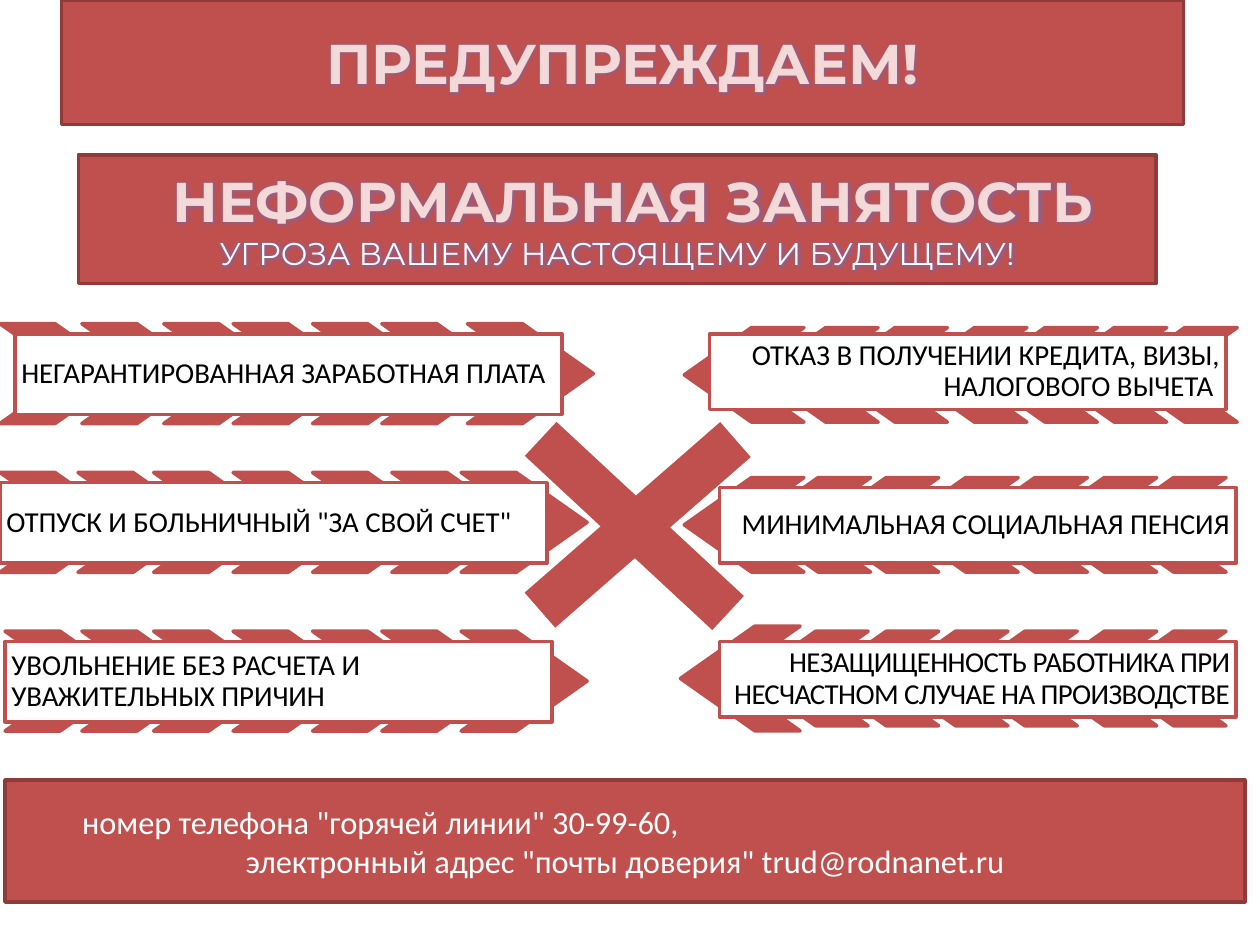
from dataclasses import dataclass

from lxml import etree
from pptx import Presentation
from pptx.dml.color import RGBColor
from pptx.enum.shapes import MSO_SHAPE
from pptx.enum.text import MSO_ANCHOR, PP_ALIGN
from pptx.oxml.ns import qn
from pptx.util import Pt

RECT = MSO_SHAPE.RECTANGLE
ARROW = MSO_SHAPE.CHEVRON
MIDDLE = MSO_ANCHOR.MIDDLE
LEFT, CENTER, RIGHT = PP_ALIGN.LEFT, PP_ALIGN.CENTER, PP_ALIGN.RIGHT

COLORS = {
    "red": "C0504D",
    "dark": "8E3B39",
    "white": "FFFFFF",
    "black": "000000",
    "pink": "F3D9D8",
    "glow": "8064A2",
}

STYLES = {
    "head": {"size": Pt(32), "bold": True, "name": "Montserrat"},
    "sub": {"size": Pt(18), "bold": False, "name": "Montserrat"},
    "foot": {"size": Pt(18.5), "bold": False, "name": "Calibri"},
    "risk": {"size": Pt(16.5), "bold": False, "name": "Calibri"},
}


@dataclass
class Area:
    x: float
    y: float
    w: float
    h: float


@dataclass
class Line:
    text: str
    style: str
    color: str
    align: PP_ALIGN = CENTER
    indent: float = 0
    glow: bool = False
    tight: int = 0


@dataclass
class Banner:
    area: Area
    lines: list[Line]


@dataclass
class Side:
    arrow: tuple[float, float]
    box: tuple[float, float]
    turn: int
    align: PP_ALIGN


@dataclass
class Risk:
    side: Side
    text: str
    top: float
    box: tuple[float, float]
    starts: list[float]
    grow: float = 0
    tight: int = 0


BANNERS = [
    Banner(Area(35.2, 0, 641, 71.3), [
        Line("ПРЕДУПРЕЖДАЕМ!", "head", "pink", glow=True),
    ]),
    Banner(Area(44.8, 88.5, 615.8, 73.5), [
        Line("НЕФОРМАЛЬНАЯ ЗАНЯТОСТЬ", "head", "pink", indent=18, glow=True),
        Line("УГРОЗА ВАШЕМУ НАСТОЯЩЕМУ И БУДУЩЕМУ!", "sub", "white", glow=True),
    ]),
    Banner(Area(2.9, 445.7, 708.5, 69.8), [
        Line('номер телефона "горячей линии" 30-99-60,', "foot", "white", LEFT, 37),
        Line('электронный адрес "почты доверия" trud@rodnanet.ru', "foot", "white"),
    ]),
]

WEST = Side((72, 57), (312.5, 46), 0, LEFT)
EAST = Side((68.4, 54), (295.2, 43.2), 180, RIGHT)

RISKS = [
    Risk(WEST, "НЕГАРАНТИРОВАННАЯ ЗАРАБОТНАЯ ПЛАТА", 185, (8.6, 190.8),
         [0, 46.8, 93.6, 133.2, 178.6, 218.2, 267.1]),
    Risk(WEST, 'ОТПУСК И БОЛЬНИЧНЫЙ "ЗА СВОЙ СЧЕТ"', 270, (0, 275.8),
         [0, 44.6, 87.8, 133.2, 178.6, 223.9, 263.5]),
    Risk(WEST, "УВОЛЬНЕНИЕ БЕЗ РАСЧЕТА И УВАЖИТЕЛЬНЫХ ПРИЧИН", 360.7, (2.9, 366.5),
         [2.9, 46.8, 87.8, 133.2, 178.6, 218.2, 263.5]),
    Risk(EAST, "ОТКАЗ В ПОЛУЧЕНИИ КРЕДИТА, ВИЗЫ, НАЛОГОВОГО ВЫЧЕТА ", 187.2, (405.4, 190.8),
         [391, 433.4, 473, 518.4, 558.7, 598.3, 638.6]),
    Risk(EAST, "МИНИМАЛЬНАЯ СОЦИАЛЬНАЯ ПЕНСИЯ", 272.9, (411.1, 278.6),
         [391, 429.1, 468, 513.4, 553, 592.6, 632.2]),
    Risk(EAST, "НЕЗАЩИЩЕННОСТЬ РАБОТНИКА ПРИ НЕСЧАСТНОМ СЛУЧАЕ НА ПРОИЗВОДСТВЕ",
         360.7, (411.1, 366.5),
         [388.8, 427.7, 468, 507.6, 547.2, 592.6, 632.2], grow=2.9, tight=-30),
]

BARS = [(Area(289.4, 287.3, 146.2, 26.6), 42.9), (Area(290.2, 286.6, 148.3, 26.6), 138.9)]


def tint(key: str) -> RGBColor:
    return RGBColor.from_string(COLORS[key])


def add_form(slide, kind, area: Area, fill: str, edge: str | None, turn: float = 0):
    form = slide.shapes.add_shape(kind, Pt(area.x), Pt(area.y), Pt(area.w), Pt(area.h))
    form.shadow.inherit = False
    form.rotation = turn
    form.fill.solid()
    form.fill.fore_color.rgb = tint(fill)
    if edge:
        form.line.color.rgb = tint(edge)
        form.line.width = Pt(2)
    else:
        form.line.fill.background()
    return form


def add_glow(run) -> None:
    fill = run.font._element.find(qn("a:solidFill"))
    effect = etree.Element(qn("a:effectLst"))
    glow = etree.SubElement(effect, qn("a:glow"), rad=str(Pt(4)))
    color = etree.SubElement(glow, qn("a:srgbClr"), val=COLORS["glow"])
    etree.SubElement(color, qn("a:alpha"), val="60000")
    fill.addnext(effect)


def write(form, lines: list[Line], inset: float | None = None, gap: float = 1) -> None:
    frame = form.text_frame
    frame.word_wrap = True
    frame.vertical_anchor = MIDDLE
    if inset is not None:
        for side in ("left", "right", "top", "bottom"):
            setattr(frame, f"margin_{side}", Pt(inset))
    for index, line in enumerate(lines):
        para = frame.add_paragraph() if index else frame.paragraphs[0]
        para.alignment = line.align
        para.line_spacing = gap
        if line.indent:
            para._p.get_or_add_pPr().set("marL", str(Pt(line.indent)))
        run = para.add_run()
        run.text = line.text
        for key, value in STYLES[line.style].items():
            setattr(run.font, key, value)
        run.font.color.rgb = tint(line.color)
        if line.tight:
            run.font._element.set("spc", str(line.tight))
        if line.glow:
            add_glow(run)


def add_risk(slide, risk: Risk) -> None:
    side = risk.side
    wide, high = side.arrow
    for index, start in enumerate(risk.starts):
        grow = 0 if index else risk.grow
        area = Area(start, risk.top - grow, wide, high + 2 * grow)
        arrow = add_form(slide, ARROW, area, "red", "red", side.turn)
        arrow.adjustments[0] = 0.71
    box = add_form(slide, RECT, Area(*risk.box, *side.box), "white", "red")
    line = Line(risk.text, "risk", "black", side.align, tight=risk.tight)
    write(box, [line], inset=3.6, gap=0.9)


def main() -> None:
    deck = Presentation()
    deck.slide_width, deck.slide_height = Pt(720), Pt(540)
    slide = deck.slides.add_slide(deck.slide_layouts[6])
    for banner in BANNERS:
        write(add_form(slide, RECT, banner.area, "red", "dark"), banner.lines)
    for risk in RISKS:
        add_risk(slide, risk)
    for area, turn in BARS:
        add_form(slide, RECT, area, "red", None, turn)
    deck.save("out.pptx")


if __name__ == "__main__":
    main()
